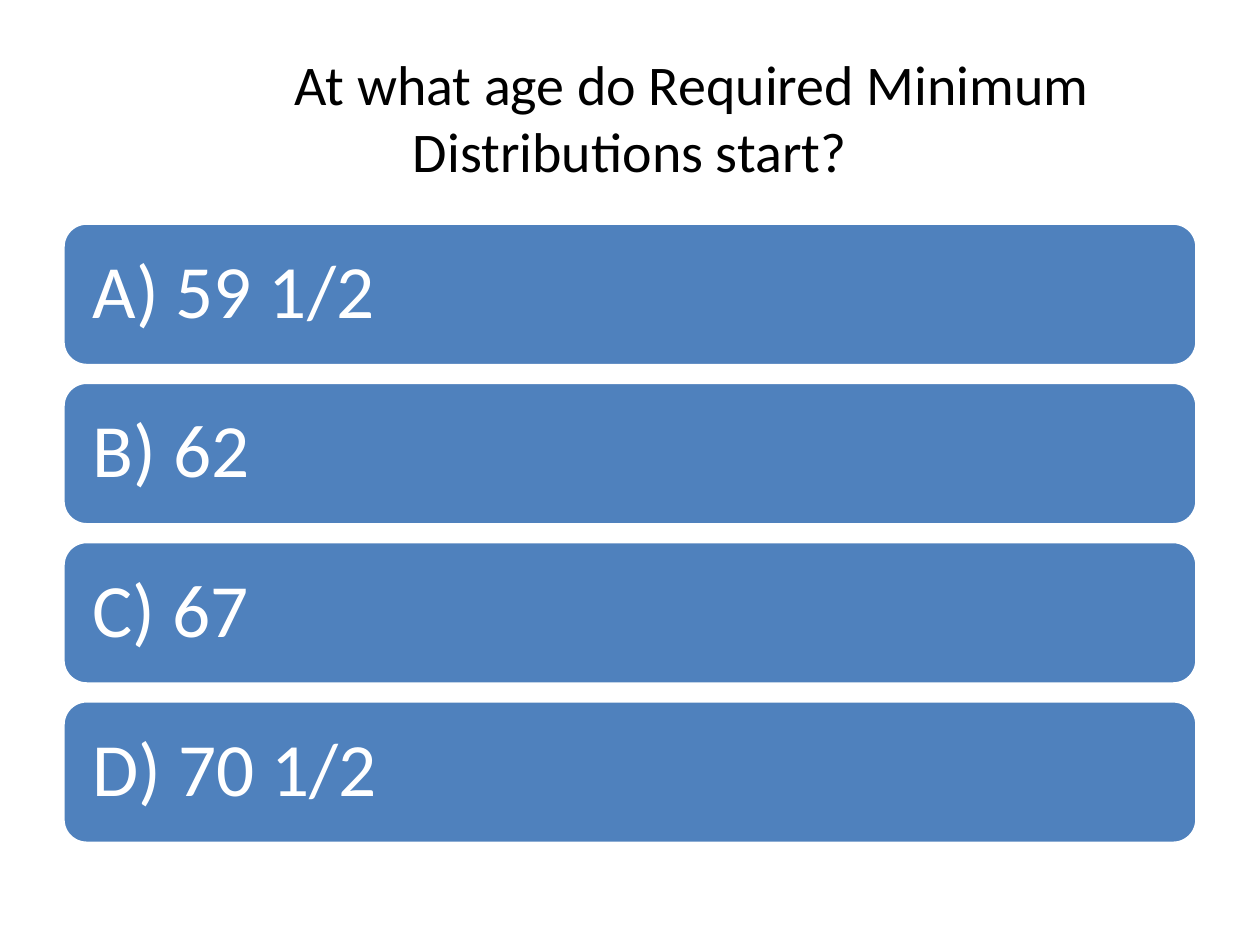
"""Build a quiz slide with a question and four answer bars."""
from dataclasses import dataclass

from pptx import Presentation
from pptx.dml.color import RGBColor
from pptx.enum import shapes, text
from pptx.util import Pt


@dataclass
class Bar:
    label: str
    top: float
    left: float = 36
    width: float = 648
    height: float = 81.4


def paint(target, color: str) -> None:
    target.rgb = RGBColor.from_string(color)


def style(para, size: float, color: str) -> None:
    para.font.name = "Calibri"
    para.font.size = Pt(size)
    paint(para.font.color, color)


def add_title(slide, words: str) -> None:
    title = slide.shapes.title
    title.left, title.top, title.width, title.height = map(Pt, (36, 21.6, 648, 90))
    frame = title.text_frame
    frame.text = words
    frame.word_wrap = True
    frame.vertical_anchor = text.MSO_ANCHOR.MIDDLE
    para = frame.paragraphs[0]
    para.alignment = text.PP_ALIGN.CENTER
    props = para._p.get_or_add_pPr()
    props.set("marL", "0")
    props.set("indent", str(Pt(71)))
    style(para, 32, "000000")


def add_bar(slide, bar: Bar) -> None:
    shape = slide.shapes.add_shape(
        shapes.MSO_SHAPE.ROUNDED_RECTANGLE,
        Pt(bar.left), Pt(bar.top), Pt(bar.width), Pt(bar.height))
    shape.shadow.inherit = False
    shape.fill.solid()
    paint(shape.fill.fore_color, "4F81BD")
    paint(shape.line.color, "FFFFFF")
    shape.line.width = Pt(2)
    frame = shape.text_frame
    frame.text = bar.label
    frame.word_wrap = True
    frame.vertical_anchor = text.MSO_ANCHOR.MIDDLE
    frame.margin_left = frame.margin_right = Pt(13)
    frame.margin_top = frame.margin_bottom = Pt(13)
    para = frame.paragraphs[0]
    para.alignment = text.PP_ALIGN.LEFT
    para.line_spacing = 0.9
    style(para, 43, "FFFFFF")


def main() -> None:
    deck = Presentation()
    deck.slide_width, deck.slide_height = Pt(720), Pt(540)
    slide = deck.slides.add_slide(deck.slide_layouts[5])
    add_title(slide, "At what age do Required Minimum Distributions start?")
    first, pitch = 127.5, 91
    for row, label in enumerate(("A) 59 1/2", "B) 62", "C) 67", "D) 70 1/2")):
        add_bar(slide, Bar(label, first + row * pitch))
    deck.save("out.pptx")


if __name__ == "__main__":
    main()
